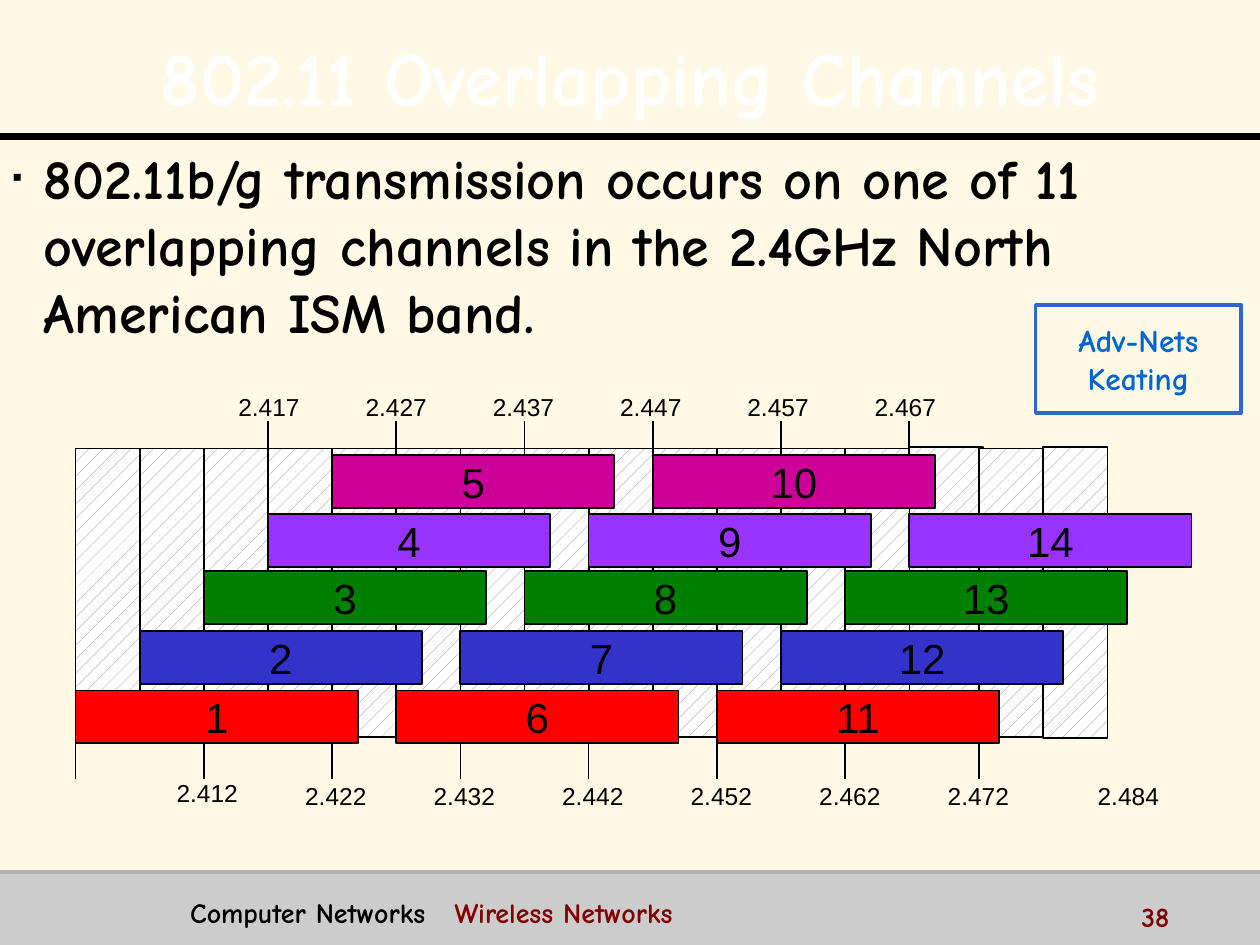
import pptx
import pptx.util
import pptx.dml.color
import pptx.enum.dml
import pptx.enum.shapes
import pptx.enum.text
import pptx.oxml
import pptx.oxml.ns
import lxml.etree

Inches, Pt = pptx.util.Inches, pptx.util.Pt
Align = pptx.enum.text.PP_ALIGN
Anchor = pptx.enum.text.MSO_ANCHOR
qn = pptx.oxml.ns.qn

TITLE = "802.11 Overlapping Channels"
BODY = ("802.11b/g transmission occurs on one of 11 overlapping channels "
        "in the 2.4GHz North American ISM band.")
CREDIT = "Adv-Nets\nKeating"
COURSE, TOPIC, NUMBER = "Computer Networks", "Wireless Networks", "38"
ROWS = [(5.48, "FF0000"), (5.01, "3333CC"), (4.53, "008000"),
        (4.08, "9933FF"), (3.61, "CC0099")]
UPPER = ["2.417", "2.427", "2.437", "2.447", "2.457", "2.467"]
LOWER = ["2.412", "2.422", "2.432", "2.442", "2.452", "2.462", "2.472"]
LAST = "2.484"
CHANNELS = 14
LEFT, STEP = 0.6, 0.51 - 0.001
COMIC, SANS = "Comic Neue", "Arial"

deck = pptx.Presentation()
deck.slide_width, deck.slide_height = Inches(10), Inches(7.5)
slide = deck.slides.add_slide(deck.slide_layouts[5])
shapes = slide.shapes


def rgb(code):
    return pptx.dml.color.RGBColor.from_string(code)


def style(run, size, face, color, bold=False):
    font = run.font
    font.size, font.name, font.bold = Pt(size), face, bold
    font.color.rgb = rgb(color)


def write(shape, text, size, face, color, bold=False,
          align=Align.CENTER, anchor=Anchor.MIDDLE, wrap=False):
    frame = shape.text_frame
    frame.text = text
    frame.word_wrap = wrap
    frame.auto_size = pptx.enum.text.MSO_AUTO_SIZE.NONE
    frame.vertical_anchor = anchor
    for para in frame.paragraphs:
        para.alignment = align
        for run in para.runs:
            style(run, size, face, color, bold)
    return frame.paragraphs[0]


def place(x, y, w, h):
    return Inches(x), Inches(y), Inches(w), Inches(h)


def rect(x, y, w, h, fill=None, edge=None, width=1):
    box = shapes.add_shape(pptx.enum.shapes.MSO_SHAPE.RECTANGLE, *place(x, y, w, h))
    box.shadow.inherit = False
    if fill:
        box.fill.solid()
        box.fill.fore_color.rgb = rgb(fill)
    else:
        box.fill.background()
    if edge:
        box.line.color.rgb = rgb(edge)
        box.line.width = Pt(width)
    else:
        box.line.fill.background()
    return box


def line(x1, y1, x2, y2, color="000000", width=1):
    link = shapes.add_connector(pptx.enum.shapes.MSO_CONNECTOR.STRAIGHT,
                                *place(x1, y1, x2, y2))
    link.line.color.rgb = rgb(color)
    link.line.width = Pt(width)
    props = link._element.find(qn("p:spPr"))
    lxml.etree.SubElement(props, qn("a:effectLst"))


def hatch(x, y, w, h):
    fill = rect(x, y, w, h, "FFFFFF", "000000").fill
    fill.patterned()
    fill.pattern = pptx.enum.dml.MSO_PATTERN.PERCENT_10
    fill.fore_color.rgb = rgb("808080")
    fill.back_color.rgb = rgb("FFFFFF")


def label(x, y, text):
    write(shapes.add_textbox(*place(x, y, 0.69, 0.33)), text, 14, SANS, "000000")


def node(xml):
    return pptx.oxml.parse_xml(xml.replace(">", " " + pptx.oxml.ns.nsdecls("a") + ">", 1))


def spot(index):
    return LEFT + STEP * index


slide.background.fill.solid()
slide.background.fill.fore_color.rgb = rgb("FFF9E6")
rect(0, 6.92, 10, 0.58, "CCCCCC")
line(0, 1.08, 10, 1.08, width=4)
line(0, 6.92, 10, 6.92, "B2B2B2", 2)

title = shapes.title
title.left, title.top, title.width, title.height = place(0.2, 0.13, 9.61, 0.87)
para = write(title, TITLE, 44, COMIC, "FFFFFF", True, wrap=True)
para.line_spacing = 1.1
glow = node('<a:effectLst><a:outerShdw dist="35921" dir="2700000">'
            '<a:srgbClr val="000000"/></a:outerShdw></a:effectLst>')
para.runs[0].font._element.find(qn("a:solidFill")).addnext(glow)

para = write(shapes.add_textbox(*place(0, 1.09, 8.75, 1.37)), BODY, 32, COMIC,
             "000000", True, Align.LEFT, Anchor.TOP, True)
props = para._p.get_or_add_pPr()
props.set("marL", str(Inches(0.25)))
props.set("indent", str(-Inches(0.25)))
for xml in ('<a:buClr><a:srgbClr val="000000"/></a:buClr>',
            '<a:buSzPct val="50000"></a:buSzPct>',
            '<a:buFont typeface="Arial"></a:buFont>',
            '<a:buChar char="▪"></a:buChar>'):
    props.append(node(xml.replace("/>", "></a:srgbClr>")))

hatch(8.28, 3.55, 0.51, 2.31)
hatch(7.21, 3.55, 0.59, 2.31)
for x in [spot(i) for i in range(13)] + [7.77]:
    hatch(x, 3.56, 0.51, 2.29)

for x in [LEFT] + [spot(i) for i in range(2, 13, 2)] + [7.77]:
    line(x, 5.72, x, 6.18)
for i, text in enumerate(UPPER):
    x = spot(3 + 2 * i)
    line(x, 3.34, x, 3.8)
    label(1.79 + 1.01 * i, 3.06, text)
for i, text in enumerate(LOWER):
    label(1.3 + 1.02 * i, 6.15 if i else 6.13, text)
label(8.61, 6.15, LAST)

for i in range(CHANNELS):
    y, color = ROWS[i % len(ROWS)]
    write(rect(spot(i), y, 2.24, 0.42, color, "000000"),
          str(i + 1), 24, SANS, "000000")

write(rect(8.22, 2.42, 1.63, 0.86, edge="3366CC", width=2),
      CREDIT, 18, COMIC, "0066CC", True)
write(shapes.add_textbox(*place(8.96, 7.09, 1, 0.25)), NUMBER, 16, COMIC,
      "800000", True, Align.LEFT, Anchor.TOP, True)
para = write(shapes.add_textbox(*place(1.41, 7.06, 7.28, 0.31)), COURSE + "\t", 16,
             COMIC, "000000", True, Align.LEFT, Anchor.TOP, True)
para._p.get_or_add_pPr().append(
    node(f'<a:tabLst><a:tab pos="{Inches(2.1)}" algn="l"/></a:tabLst>'))
run = para.add_run()
run.text = TOPIC
style(run, 16, COMIC, "800000", True)

deck.save("out.pptx")
